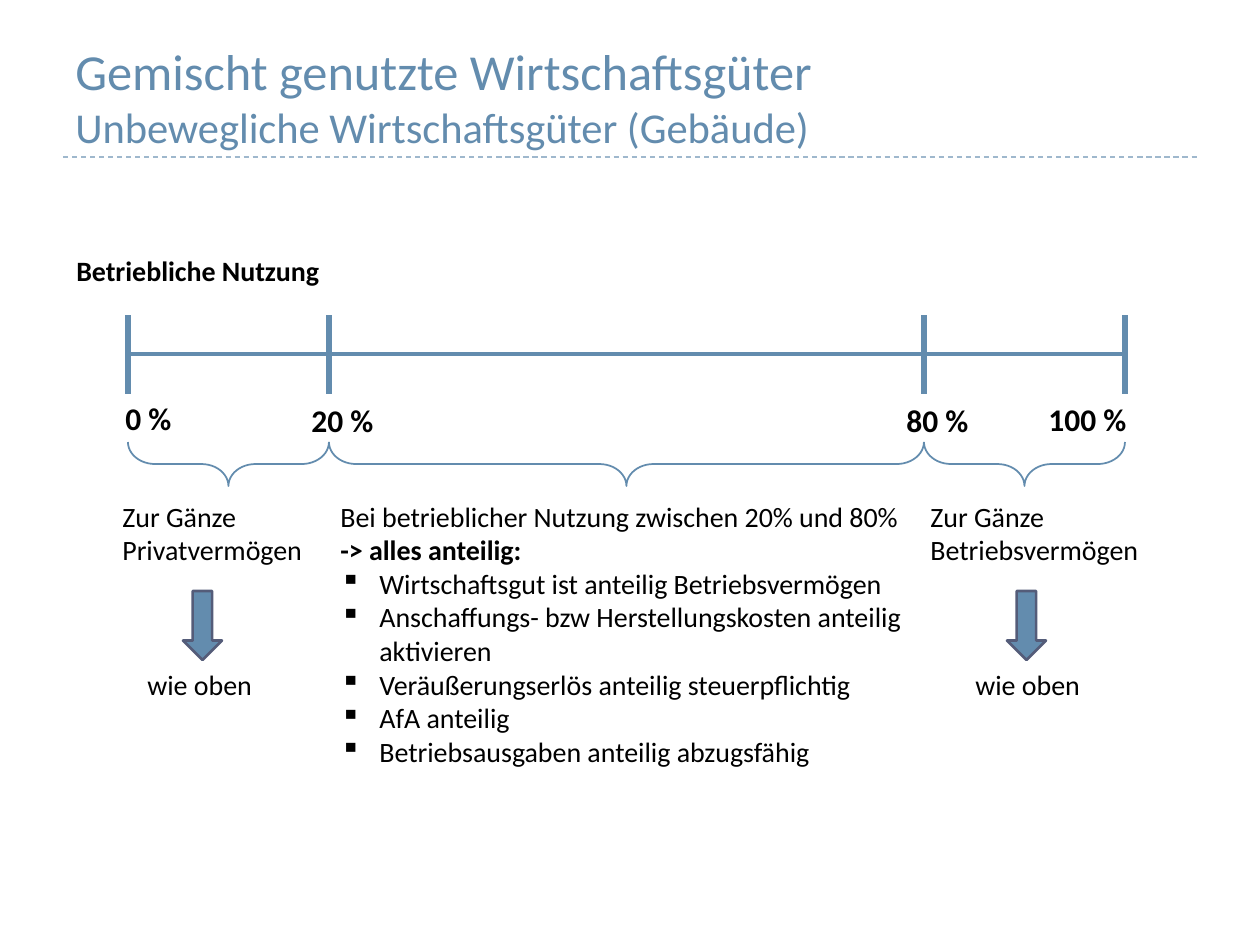
from lxml import etree
from pptx import Presentation
from pptx.dml.color import RGBColor
from pptx.enum.dml import MSO_LINE
from pptx.enum.shapes import MSO_CONNECTOR, MSO_SHAPE
from pptx.enum.text import MSO_ANCHOR
from pptx.oxml.ns import qn
from pptx.util import Pt

PX = 914400 / 126
STRAIGHT = MSO_CONNECTOR.STRAIGHT
BRACE, ARROW = MSO_SHAPE.LEFT_BRACE, MSO_SHAPE.DOWN_ARROW
DASH, TOP, BOTTOM = MSO_LINE.DASH, MSO_ANCHOR.TOP, MSO_ANCHOR.BOTTOM
COLORS = {name: RGBColor.from_string(value) for name, value in {
    "blue": "638CAE", "rule": "9FB8CD", "outline": "545C79", "text": "000000"}.items()}


def px(*lengths):
    return [round(length * PX) for length in lengths]


def add_text(text, frame=None, box=None, size=16, bold=False, color="text",
             anchor=TOP, indent=0, bullet=None, before=0):
    """Write a paragraph into a new box or at the end of a frame; a list of
    (text, size) pairs is joined by line breaks."""
    if frame is None:
        frame = slide.shapes.add_textbox(*px(*box)).text_frame
        frame.word_wrap = True
        frame.vertical_anchor = anchor
        paragraph = frame.paragraphs[0]
    else:
        paragraph = frame.add_paragraph()
    paragraph.space_before = Pt(before)
    lines = [(text, size)] if isinstance(text, str) else text
    for number, (line_text, line_size) in enumerate(lines):
        if number:
            paragraph.add_line_break()
        run = paragraph.add_run()
        run.text = line_text
        run.font.name = "Calibri"
        run.font.size = Pt(line_size)
        run.font.bold = bold
        run.font.color.rgb = COLORS[color]
    properties = paragraph._p.get_or_add_pPr()
    if indent:
        properties.set("marL", str(px(indent)[0]))
    if bullet:
        properties.set("indent", str(-px(indent)[0]))
        etree.SubElement(properties, qn("a:buChar")).set("char", bullet)
    return frame


prs = Presentation()
prs.slide_width, prs.slide_height = px(1260, 945)
slide = prs.slides.add_slide(prs.slide_layouts[6])

# Title and heading of the scale
add_text([("Gemischt genutzte Wirtschaftsgüter", 28.8),
          ("Unbewegliche Wirtschaftsgüter (Gebäude)", 24.3)],
         box=(63, 32, 1134, 126), color="blue", anchor=BOTTOM)
add_text("Betriebliche Nutzung", box=(64, 247, 566, 47), bold=True)

# Title rule, scale axis and its ticks
TICKS = [128, 329, 924, 1125]
lines = [(63, 157, 1197, 157, "rule", 0.75, DASH),
         (TICKS[0], 354, TICKS[-1], 354, "blue", 2, None)]
lines += [(x, 315, x, 394, "blue", 3, None) for x in TICKS]
for x1, y1, x2, y2, color, width, dash in lines:
    line = slide.shapes.add_connector(STRAIGHT, *px(x1, y1, x2, y2))
    line.line.color.rgb = COLORS[color]
    line.line.width = Pt(width)
    if dash:
        line.line.dash_style = dash
    etree.SubElement(line._element.spPr, qn("a:effectLst"))

# Percentages below the ticks
for label, x, y, width in [("0 %", 113, 393, 90), ("20 %", 299, 395, 113),
                           ("80 %", 894, 395, 103), ("100 %", 1036, 394, 110)]:
    add_text(label, box=(x, y, width, 50), size=18, bold=True)

# A brace under each section of the scale
BRACE_DEPTH, BRACE_MIDDLE = 44, 464
for start, end in zip(TICKS, TICKS[1:]):
    span = end - start
    brace = slide.shapes.add_shape(BRACE, *px(
        (start + end - BRACE_DEPTH) / 2, BRACE_MIDDLE - span / 2, BRACE_DEPTH, span))
    brace.rotation = 270
    brace.adjustments[0] = 0.618
    brace.fill.background()
    brace.line.color.rgb = COLORS["blue"]
    brace.line.width = Pt(1)
    brace.shadow.inherit = False

# Middle section: everything in proportion
shares = add_text("Bei betrieblicher Nutzung zwischen 20% und 80%", box=(328, 493, 596, 322))
add_text("-> alles anteilig:", frame=shares, bold=True)
for item in ["Wirtschaftsgut ist anteilig Betriebsvermögen",
             "Anschaffungs- bzw Herstellungskosten anteilig aktivieren",
             "Veräußerungserlös anteilig steuerpflichtig",
             "AfA anteilig",
             "Betriebsausgaben anteilig abzugsfähig"]:
    add_text(item, frame=shares, indent=39, bullet="▪")

# Outer sections: wholly private or wholly business assets
for assets, x, width, indent, arrow_x in [
        ("Zur Gänze Privatvermögen", 110, 256, 25, 183),
        ("Zur Gänze Betriebsvermögen", 918, 243, 45, 1007)]:
    section = add_text(assets, box=(x, 493, width, 217))
    add_text("wie oben", frame=section, indent=indent, before=58)
    arrow = slide.shapes.add_shape(ARROW, *px(arrow_x, 591, 39, 69))
    arrow.fill.solid()
    arrow.fill.fore_color.rgb = COLORS["blue"]
    arrow.line.color.rgb = COLORS["outline"]
    arrow.line.width = Pt(1.5)
    arrow.shadow.inherit = False

prs.save("out.pptx")
